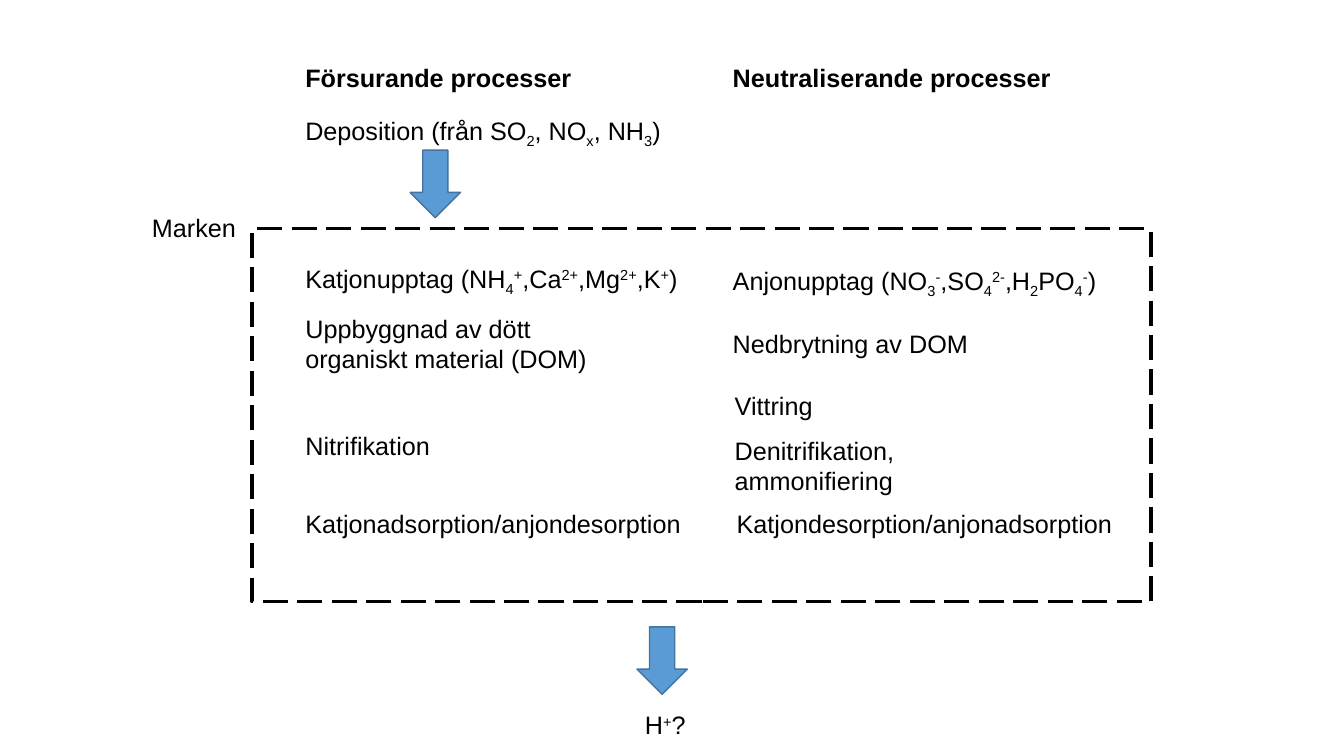
from dataclasses import dataclass

from pptx import Presentation as Deck
from pptx.dml.color import RGBColor as Color
from pptx.enum.dml import MSO_LINE as Dash
from pptx.enum.shapes import MSO_SHAPE as Form
from pptx.enum.text import MSO_AUTO_SIZE as Fit
from pptx.shapes.autoshape import Shape
from pptx.slide import Slide
from pptx.util import Pt

HUES = {"ink": "000000", "fill": "5B9BD5", "edge": "43739E"}
BASE = {"_": "-25000", "^": "30000"}
LEFT, RIGHT = 211, 516.3


@dataclass
class Label:
    text: str
    x: float
    y: float
    wide: float
    bold: bool = False
    wrap: bool = False


@dataclass
class Arrow:
    x: float
    y: float


LABELS = [
    Label("Försurande processer", LEFT, 41, 206.6, bold=True),
    Label("Neutraliserande processer", RIGHT, 41, 244, bold=True),
    Label("Deposition (från SO|_2|, NO|_x|, NH|_3|)", LEFT, 78.5, 273.6),
    Label("Marken", 101.5, 148.3, 74.9),
    Label("Katjonupptag (NH|_4|^+|,Ca|^2+|,Mg|^2+|,K|^+|)", LEFT, 184.3, 288.7),
    Label("Anjonupptag (NO|_3|^-|,SO|_4|^2-|,H|_2|PO|_4|^-|)", RIGHT, 185.8, 282.2),
    Label("Uppbyggnad av dött\norganiskt material (DOM)", LEFT, 220.3, 217.4),
    Label("Nedbrytning av DOM", RIGHT, 231.1, 184.3),
    Label("Vittring", 517.7, 275, 70.6),
    Label("Nitrifikation", LEFT, 303.8, 104.4),
    Label("Denitrifikation,\nammonifiering", 517.7, 307.4, 134.6),
    Label("Katjonadsorption/anjondesorption", LEFT, 359.3, 285.1),
    Label("Katjondesorption/anjonadsorption", 519.1, 359.3, 285.1),
    Label("H|^+|?", 453.6, 503.3, 54.7, wrap=True),
]
ARROWS = [Arrow(293, 107.3), Arrow(455, 447.8)]


def hue(name: str) -> Color:
    return Color.from_string(HUES[name])


def write(slide: Slide, text: str, *, x: float, y: float, wide: float,
          bold: bool = False, wrap: bool = False, size: float = 18) -> None:
    lines = text.split("\n")
    high = 28.8 if len(lines) == 1 else 51.1
    frame = slide.shapes.add_textbox(Pt(x), Pt(y), Pt(wide), Pt(high)).text_frame
    frame.word_wrap = wrap
    frame.auto_size = Fit.SHAPE_TO_FIT_TEXT
    for i, line in enumerate(lines):
        para = frame.paragraphs[0] if i == 0 else frame.add_paragraph()
        for part in line.split("|"):
            run = para.add_run()
            run.text = part.lstrip("_^")
            font = run.font
            font.name, font.size, font.bold = "Arial", Pt(size), bold
            font.color.rgb = hue("ink")
            if part[0] in BASE:
                run._r.get_or_add_rPr().set("baseline", BASE[part[0]])


def draw(slide: Slide, form: Form, x: float, y: float, wide: float,
         high: float, edge: str, thick: float) -> Shape:
    shape = slide.shapes.add_shape(form, Pt(x), Pt(y), Pt(wide), Pt(high))
    shape.shadow.inherit = False
    shape.line.color.rgb = hue(edge)
    shape.line.width = Pt(thick)
    return shape


def main() -> None:
    deck = Deck()
    deck.slide_width, deck.slide_height = Pt(960), Pt(540)
    slide = deck.slides.add_slide(deck.slide_layouts[6])
    soil = draw(slide, Form.RECTANGLE, 180, 163.4, 642.2, 266.4, "ink", 2.25)
    soil.fill.background()
    soil.line.dash_style = Dash.LONG_DASH
    for item in ARROWS:
        arrow = draw(slide, Form.DOWN_ARROW, item.x, item.y, 36, 48.2, "edge", 1)
        arrow.fill.solid()
        arrow.fill.fore_color.rgb = hue("fill")
    for item in LABELS:
        write(slide, item.text, x=item.x, y=item.y, wide=item.wide,
              bold=item.bold, wrap=item.wrap)
    deck.save("out.pptx")


if __name__ == "__main__":
    main()
